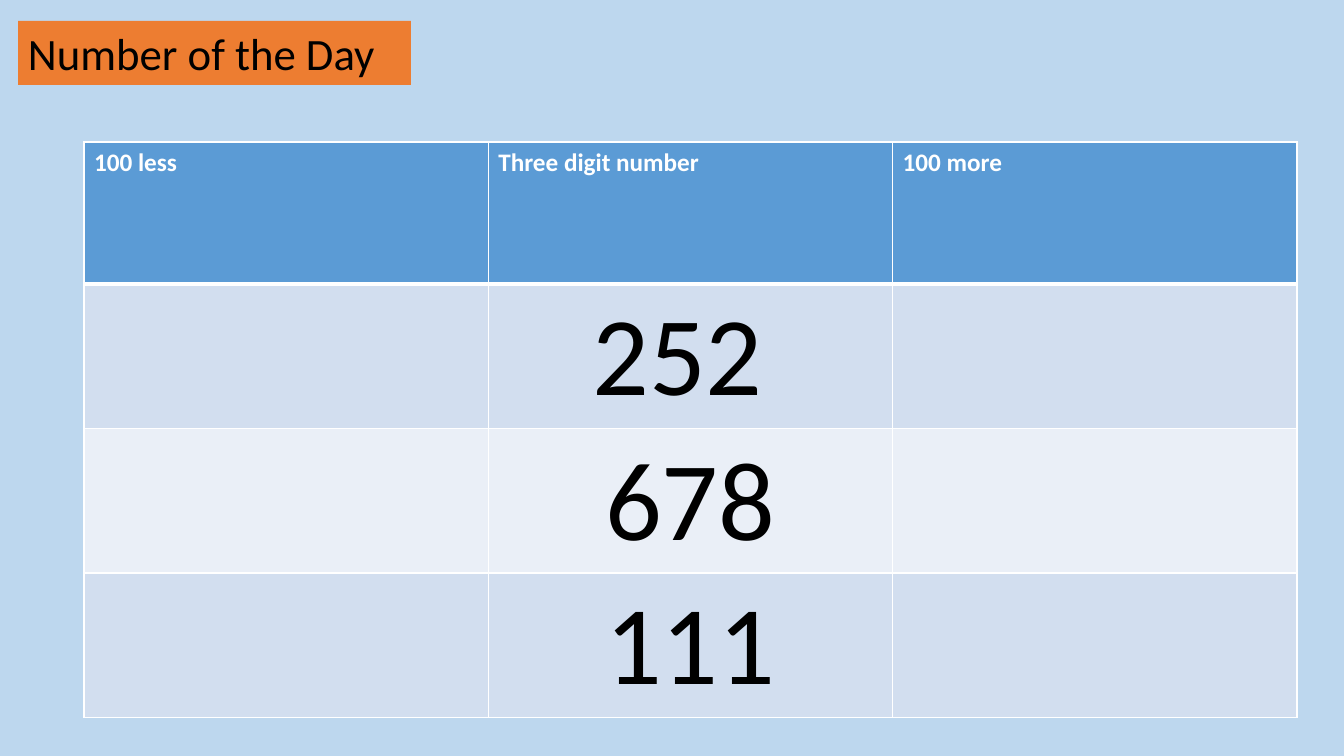
from lxml import etree
from pptx import Presentation
from pptx.dml.color import RGBColor
from pptx.enum import shapes, text
from pptx.oxml import ns
from pptx.util import Emu, Pt

PX = 914400 / 100.8
COLORS = {
    "background": "BDD7EE",
    "title": "ED7D31",
    "header": "5B9BD5",
    "odd": "D2DEEF",
    "even": "EAEFF7",
    "white": "FFFFFF",
    "black": "000000",
}
HEADINGS = ["100 less", "Three digit number", "100 more"]
NUMBERS = ["252 ", "678", "111"]
HEADER_FONT = {"name": "Calibri", "size": Pt(18), "bold": True}
NUMBER_FONT = {"name": "Calibri", "size": Pt(80), "bold": False}
TITLE_FONT = {"name": "Calibri", "size": Pt(32), "bold": False}


def px(*lengths):
    return [Emu(round(length * PX)) for length in lengths]


def paint(fill, color):
    fill.solid()
    fill.fore_color.rgb = RGBColor.from_string(COLORS[color])


def write(frame, words, font, color, align=text.PP_ALIGN.LEFT):
    para = frame.paragraphs[0]
    para.alignment = align
    span = para.add_run()
    span.text = words
    for name, value in font.items():
        setattr(span.font, name, value)
    span.font.color.rgb = RGBColor.from_string(COLORS[color])


def add_title(page, words, bounds):
    box = page.shapes.add_shape(shapes.MSO_SHAPE.RECTANGLE, *px(*bounds))
    box.shadow.inherit = False
    paint(box.fill, "title")
    box.line.fill.background()
    frame = box.text_frame
    frame.word_wrap = True
    frame.auto_size = text.MSO_AUTO_SIZE.SHAPE_TO_FIT_TEXT
    frame.vertical_anchor = text.MSO_ANCHOR.TOP
    write(frame, words, TITLE_FONT, "black")


def add_border(cell, side, points):
    properties = cell._tc.get_or_add_tcPr()
    line = etree.SubElement(properties, ns.qn(f"a:ln{side}"), w=str(Pt(points)))
    fill = etree.SubElement(line, ns.qn("a:solidFill"))
    etree.SubElement(fill, ns.qn("a:srgbClr"), val=COLORS["white"])


def add_number_table(page, bounds):
    rows = [HEADINGS] + [["", number, ""] for number in NUMBERS]
    frame = page.shapes.add_table(len(rows), len(HEADINGS), *px(*bounds))
    table = frame.table
    table.horz_banding = False
    for row, values in enumerate(rows):
        for column, words in enumerate(values):
            cell = table.cell(row, column)
            for side in "LRTB":
                thick = (row, side) in [(0, "B"), (1, "T")]
                add_border(cell, side, 3 if thick else 1)
            if row == 0:
                paint(cell.fill, "header")
                write(cell.text_frame, words, HEADER_FONT, "white")
                continue
            paint(cell.fill, "odd" if row % 2 else "even")
            if words:
                write(cell.text_frame, words, NUMBER_FONT, "black", text.PP_ALIGN.CENTER)


def main():
    deck = Presentation()
    deck.slide_width, deck.slide_height = px(1344, 756)
    page = deck.slides.add_slide(deck.slide_layouts[6])
    paint(page.background.fill, "background")
    add_title(page, "Number of the Day", (18, 21, 393, 64))
    add_number_table(page, (84, 142, 1213, 568))
    deck.save("out.pptx")


if __name__ == "__main__":
    main()
